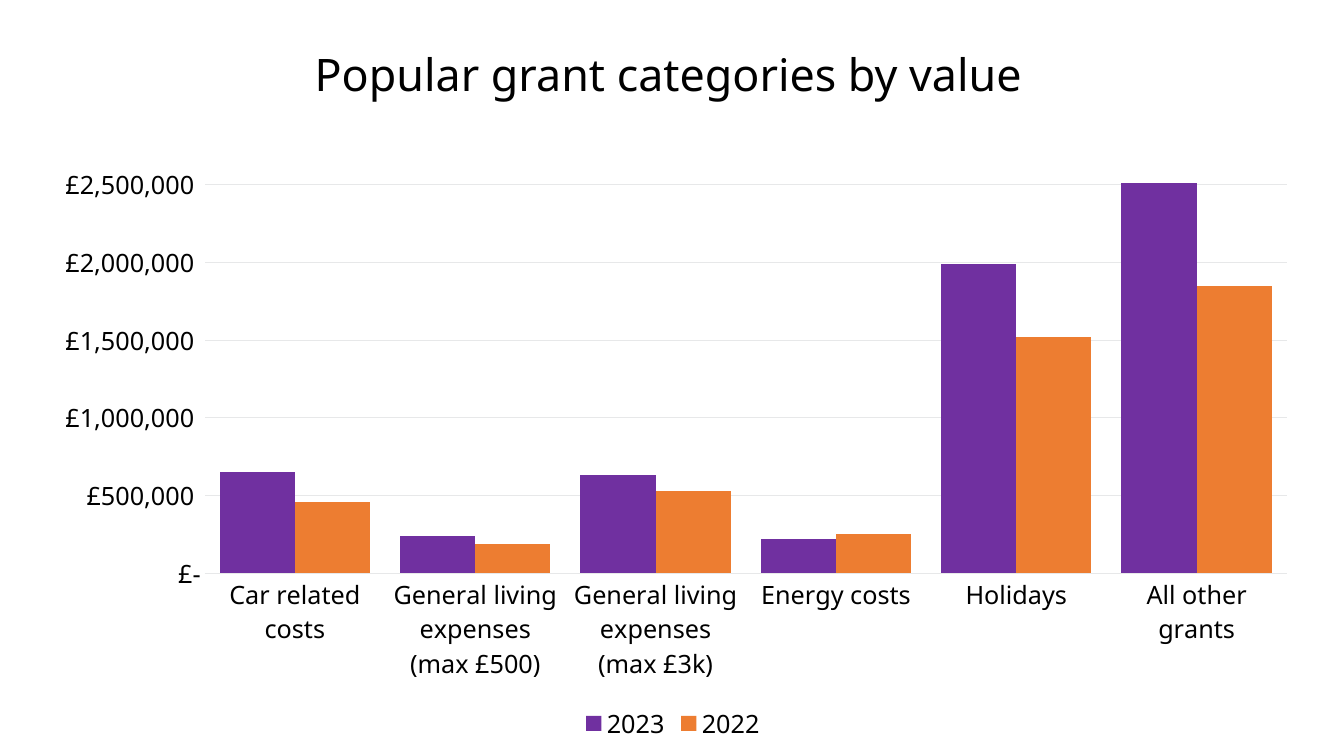
from dataclasses import dataclass

from lxml import etree
from pptx import Presentation
from pptx.chart.data import CategoryChartData
from pptx.dml.color import RGBColor
from pptx.enum.chart import XL_CHART_TYPE, XL_LEGEND_POSITION, XL_TICK_MARK
from pptx.enum.text import MSO_ANCHOR, PP_ALIGN
from pptx.oxml.ns import qn
from pptx.util import Pt

COLUMNS = XL_CHART_TYPE.COLUMN_CLUSTERED
BOTTOM = XL_LEGEND_POSITION.BOTTOM
NO_TICK = XL_TICK_MARK.NONE
MIDDLE = MSO_ANCHOR.MIDDLE
LEFT = PP_ALIGN.LEFT


@dataclass(frozen=True)
class Theme:
    font: str = "Noto Sans"
    text: str = "000000"
    grid: str = "E7E8E9"
    purple: str = "7030A0"
    orange: str = "ED7D31"
    title_size: int = 32
    chart_size: int = 18


THEME = Theme()


def set_font(font, size, color=THEME.text):
    font.name = THEME.font
    font.size = Pt(size)
    font.bold = False
    font.color.rgb = RGBColor.from_string(color)


def write_text(tf, text, size, color=THEME.text, align=LEFT, anchor=MIDDLE, wrap=True):
    tf.word_wrap = wrap
    tf.vertical_anchor = anchor
    p = tf.paragraphs[0]
    p.alignment = align
    r = p.add_run()
    r.text = text
    set_font(r.font, size, color)


prs = Presentation()
prs.slide_width, prs.slide_height = Pt(960), Pt(540)
s = prs.slides.add_slide(prs.slide_layouts[5])

# Title
title = s.shapes.title
title.left, title.top, title.width, title.height = Pt(217.5), Pt(29.5), Pt(594.7), Pt(46)
write_text(title.text_frame, "Popular grant categories by value", THEME.title_size)

# Chart data
data = CategoryChartData()
data.categories = [
    "Car related costs",
    "General living expenses (max £500)",
    "General living expenses (max £3k)",
    "Energy costs",
    "Holidays",
    "All other grants",
]
data.add_series("2023", [650000, 240000, 630000, 220000, 1990000, 2510000])
data.add_series("2022", [460000, 190000, 530000, 250000, 1520000, 1850000])

chart = s.shapes.add_chart(
    COLUMNS, Pt(23.8), Pt(111.6), Pt(913.7), Pt(421.2), data
).chart
chart.has_title = False
set_font(chart.font, THEME.chart_size)

# Columns
plot = chart.plots[0]
plot.gap_width = 40
plot.overlap = 0
plot.vary_by_categories = False
for series, color in zip(plot.series, (THEME.purple, THEME.orange)):
    series.format.fill.solid()
    series.format.fill.fore_color.rgb = RGBColor.from_string(color)

# Axes
cat_axis, val_axis = chart.category_axis, chart.value_axis
for axis in (cat_axis, val_axis):
    axis.major_tick_mark = axis.minor_tick_mark = NO_TICK
    set_font(axis.tick_labels.font, THEME.chart_size)
val_axis.minimum_scale = 0
val_axis.maximum_scale = 2520000
val_axis.major_unit = 500000
val_axis.has_major_gridlines = True
val_axis.format.line.fill.background()
val_axis.tick_labels.number_format = (
    '_-"£"* #,##0_-;\\-"£"* #,##0_-;_-"£"* "-"'
)
val_axis.tick_labels.number_format_is_linked = False
for line in (cat_axis.format.line, val_axis.major_gridlines.format.line):
    line.color.rgb = RGBColor.from_string(THEME.grid)
    line.width = Pt(0.75)

# Legend
chart.has_legend = True
chart.legend.position = BOTTOM
chart.legend.include_in_layout = False
set_font(chart.legend.font, THEME.chart_size)

# Inner plot area, as fractions of the chart frame
plot_area = chart.plots[0]._element.getparent()
for layout in plot_area.findall(qn("c:layout")):
    plot_area.remove(layout)
layout = etree.Element(qn("c:layout"))
plot_area.insert(0, layout)
manual = etree.SubElement(layout, qn("c:manualLayout"))
for tag, value in (
    ("layoutTarget", "inner"),
    ("xMode", "edge"),
    ("yMode", "edge"),
    ("x", "0.134"),
    ("y", "0.043"),
    ("w", "0.846"),
    ("h", "0.664"),
):
    etree.SubElement(manual, qn(f"c:{tag}")).set("val", value)

prs.save("out.pptx")
